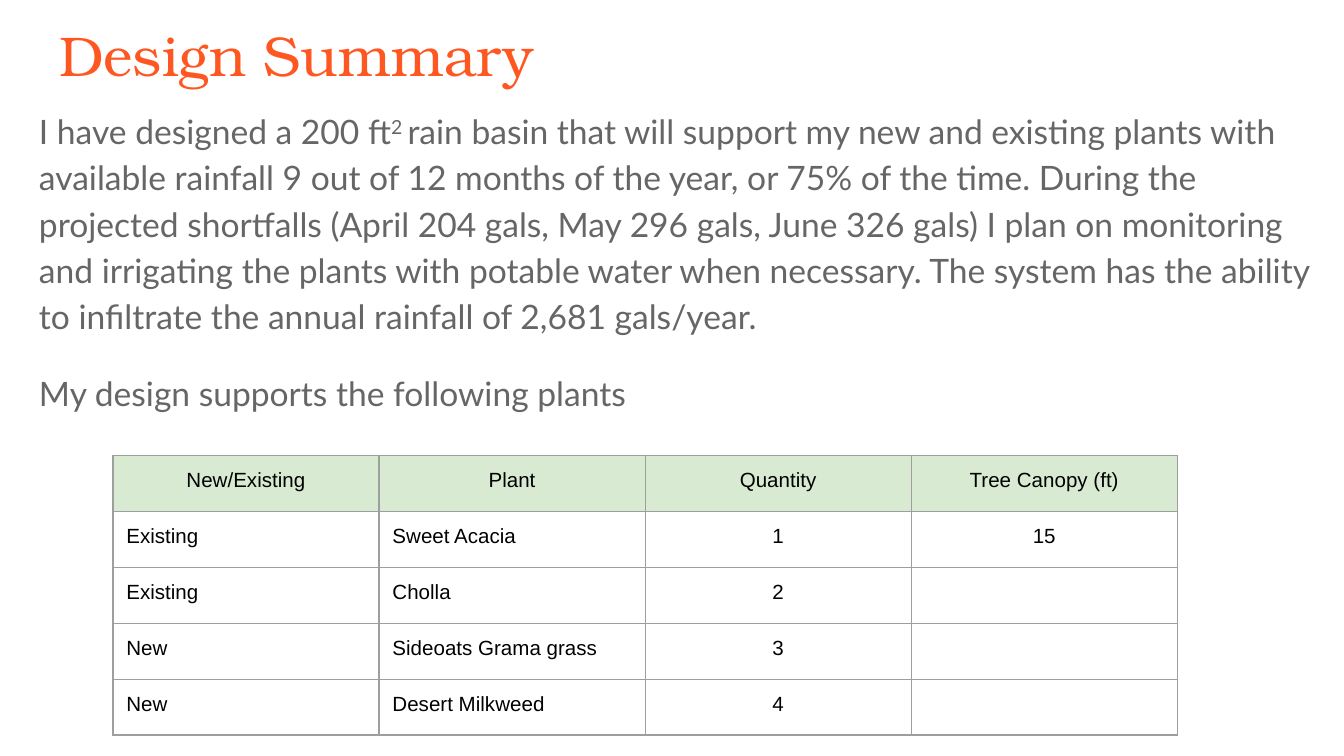
from lxml import etree
from pptx import Presentation
from pptx import util as u
from pptx.dml.color import RGBColor
from pptx.enum import text
from pptx.oxml import ns

ORANGE = RGBColor(0xFF, 0x57, 0x22)
GRAY = RGBColor(0x66, 0x66, 0x66)
BLACK = RGBColor(0x00, 0x00, 0x00)
HEADER_GREEN = RGBColor(0xD9, 0xEA, 0xD3)
BORDER_GRAY = RGBColor(0x9E, 0x9E, 0x9E)

SLIDE_WIDTH = u.Inches(10)
SLIDE_HEIGHT = SLIDE_WIDTH * 9 // 16

TITLE_FONT = {"name": "TeX Gyre Bonum", "size": u.Pt(30), "color": ORANGE}
BODY_FONT = {"name": "Lato", "size": u.Pt(18), "color": GRAY}
TABLE_FONT = {"name": "Arial", "size": u.Pt(11), "color": BLACK}

SUMMARY = [
    ("I have designed a 200 ft", 0),
    ("2 ", 30),
    ("rain basin that will support my new and existing plants with available "
     "rainfall 9 out of 12 months of the year, or 75% of the time. During the "
     "projected shortfalls (April 204 gals, May 296 gals, June 326 gals) I plan "
     "on monitoring and irrigating the plants with potable water when necessary. "
     "The system has the ability to infiltrate the annual rainfall of 2,681 "
     "gals/year.", 0),
]
PLANTS_INTRO = [("My design supports the following plants", 0)]
PLANTS = [
    ("New/Existing", "Plant", "Quantity", "Tree Canopy (ft)"),
    ("Existing", "Sweet Acacia", "1", "15"),
    ("Existing", "Cholla", "2", ""),
    ("New", "Sideoats Grama grass", "3", ""),
    ("New", "Desert Milkweed", "4", ""),
]
MARGINS = ("margin_left", "margin_top", "margin_right", "margin_bottom")


def apply(target, values):
    for name, value in values.items():
        setattr(target, name, value)


def add_run(paragraph, words, style, superscript=0):
    run = paragraph.add_run()
    run.text = words
    apply(run.font, {"name": style["name"], "size": style["size"], "bold": False})
    run.font.color.rgb = style["color"]
    if superscript:
        run.font._element.set("baseline", str(superscript * 1000))


def place(placeholder, left, top, width, height):
    apply(placeholder, {"left": u.Inches(left), "top": u.Inches(top),
                        "width": u.Inches(width), "height": u.Inches(height)})
    frame = placeholder.text_frame
    apply(frame, dict.fromkeys(MARGINS, u.Inches(0.1)))
    apply(frame, {"word_wrap": True, "auto_size": text.MSO_AUTO_SIZE.NONE,
                  "vertical_anchor": text.MSO_ANCHOR.TOP})
    return frame


def fill_title(placeholder):
    paragraph = place(placeholder, 0.34, 0.05, 9.32, 0.63).paragraphs[0]
    paragraph.alignment = text.PP_ALIGN.LEFT
    add_run(paragraph, "Design Summary", TITLE_FONT)


def format_body_paragraph(paragraph, runs, spacing):
    apply(paragraph, {"alignment": text.PP_ALIGN.LEFT, "line_spacing": 1.15,
                      "space_before": u.Pt(spacing), "space_after": u.Pt(spacing)})
    properties = paragraph._p.get_or_add_pPr()
    properties.set("marL", "0")
    properties.set("indent", "0")
    etree.SubElement(properties, ns.qn("a:buNone"))
    for words, superscript in runs:
        add_run(paragraph, words, BODY_FONT, superscript)


def fill_body(placeholder):
    frame = place(placeholder, 0.19, 0.68, 9.66, 2.39)
    format_body_paragraph(frame.paragraphs[0], SUMMARY, 0)
    format_body_paragraph(frame.add_paragraph(), PLANTS_INTRO, 16)


def add_borders(cell):
    properties = cell._tc.get_or_add_tcPr()
    for position, side in enumerate(("a:lnL", "a:lnR", "a:lnT", "a:lnB")):
        line = etree.Element(ns.qn(side), w=str(u.Pt(0.75)))
        fill = etree.SubElement(line, ns.qn("a:solidFill"))
        etree.SubElement(fill, ns.qn("a:srgbClr"), val=str(BORDER_GRAY))
        properties.insert(position, line)


def fill_cell(cell, words, centered, is_header):
    apply(cell, dict.fromkeys(MARGINS, u.Inches(0.1)))
    cell.vertical_anchor = text.MSO_ANCHOR.TOP
    if is_header:
        cell.fill.solid()
        cell.fill.fore_color.rgb = HEADER_GREEN
    else:
        cell.fill.background()
    add_borders(cell)
    paragraph = cell.text_frame.paragraphs[0]
    paragraph.alignment = text.PP_ALIGN.CENTER if centered else text.PP_ALIGN.LEFT
    if words:
        add_run(paragraph, words, TABLE_FONT)
    else:
        size = str(int(TABLE_FONT["size"].pt * 100))
        etree.SubElement(paragraph._p, ns.qn("a:endParaRPr"), sz=size)


def add_plant_table(slide):
    frame = slide.shapes.add_table(len(PLANTS), len(PLANTS[0]), u.Inches(0.84),
                                   u.Inches(3.39), u.Inches(7.92), u.Inches(2.08))
    table = frame.table
    apply(table, {"first_row": False, "horz_banding": False})
    for row, entries in enumerate(PLANTS):
        for column, words in enumerate(entries):
            fill_cell(table.cell(row, column), words, row == 0 or column >= 2, row == 0)


def main():
    presentation = Presentation()
    apply(presentation, {"slide_width": SLIDE_WIDTH, "slide_height": SLIDE_HEIGHT})
    slide = presentation.slides.add_slide(presentation.slide_layouts[1])
    fill_title(slide.shapes.title)
    fill_body(slide.placeholders[1])
    add_plant_table(slide)
    presentation.save("out.pptx")


if __name__ == "__main__":
    main()
